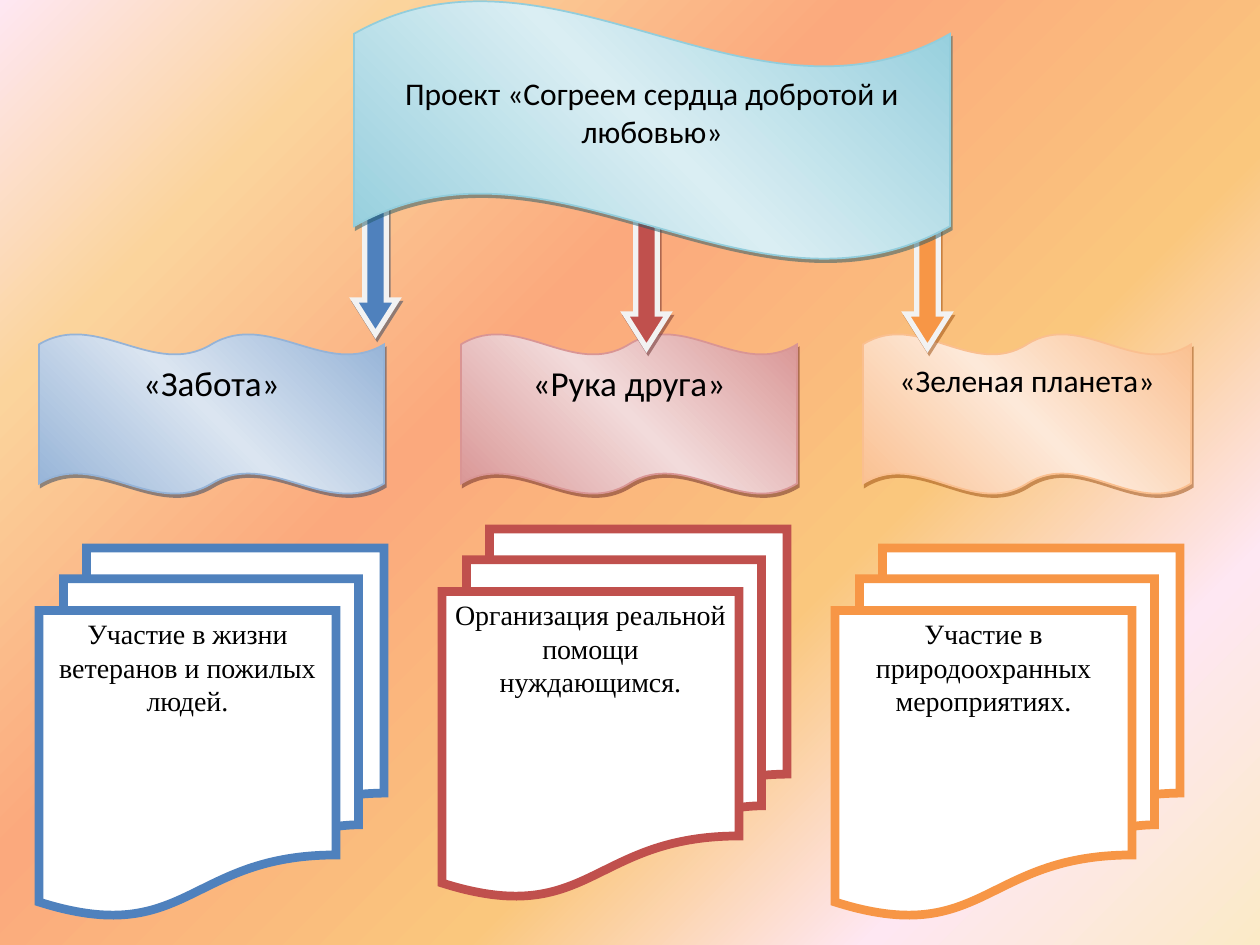
from lxml import etree
from pptx import Presentation, util as u
from pptx.dml import color
from pptx.enum import shapes, text
from pptx.oxml import ns

PX_PER_INCH = 126
COLORS = {
    "white": "FFFFFF", "black": "000000", "arrow_edge": "F2F2F2",
    "blue": "4F81BD", "blue_mid": "95B3D7", "blue_pale": "DBE5F1", "blue_dark": "243F60",
    "red": "C0504D", "red_mid": "D99594", "red_pale": "F2DBDB", "red_dark": "622423",
    "orange": "F79646", "orange_mid": "FABF8F", "orange_pale": "FDE9D9", "orange_dark": "974706",
    "aqua_mid": "92CDDC", "aqua_pale": "DAEEF3", "aqua_dark": "205867",
    "cream": "FBEAC7", "rose": "FEE7F2", "gold": "FAC77D", "coral": "FBA97D", "sand": "FBD49C",
}
BACKGROUND = [(0, "cream"), (18, "rose"), (36, "gold"), (61, "coral"), (82, "sand"), (100, "rose")]


def px(length):
    return u.Emu(round(length * u.Inches(1) / PX_PER_INCH))


def rgb(name):
    return color.RGBColor.from_string(COLORS[name])


def add_node(parent, tag, **attributes):
    values = {key: str(int(value)) if isinstance(value, int) else value
              for key, value in attributes.items()}
    return etree.SubElement(parent, ns.qn(tag), values)


class SlideBuilder:
    paragraph_format = {"alignment": text.PP_ALIGN.CENTER, "space_after": u.Pt(10)}
    frame_format = {"word_wrap": True, "vertical_anchor": text.MSO_ANCHOR.TOP}

    def __init__(self, slide):
        self.slide = slide

    def gradient(self, fill, element, stops):
        fill.gradient()
        node = element.find(".//" + ns.qn("a:gradFill"))
        for child in list(node):
            node.remove(child)
        stop_list = add_node(node, "a:gsLst")
        for position, name in stops:
            stop = add_node(stop_list, "a:gs", pos=position * 1000)
            add_node(stop, "a:srgbClr", val=COLORS[name])
        return node

    def background(self, stops):
        node = self.gradient(self.slide.background.fill, self.slide.element, stops)
        circle = add_node(node, "a:path", path="circle")
        add_node(circle, "a:fillToRect", l=100000, t=100000)

    def shape(self, kind, box, line, width, adjustments=(), shadow=None):
        shape = self.slide.shapes.add_shape(kind, *map(px, box))
        for index, value in enumerate(adjustments):
            shape.adjustments[index] = value
        shape.line.color.rgb = rgb(line)
        shape.line.width = u.Pt(width)
        properties = shape.element.spPr
        add_node(properties.find(ns.qn("a:ln")), "a:miter", lim=800000)
        shape.shadow.inherit = False
        if shadow:
            effects = properties.find(ns.qn("a:effectLst"))
            outer = add_node(effects, "a:outerShdw", dist=u.Pt(2.2), dir=63 * 60000,
                             algn="ctr", rotWithShape=0)
            tint = add_node(outer, "a:srgbClr", val=COLORS[shadow])
            add_node(tint, "a:alpha", val=50000)
        return shape

    def solid(self, shape, name):
        shape.fill.solid()
        shape.fill.fore_color.rgb = rgb(name)

    def label(self, shape, words, size, font):
        frame = shape.text_frame
        paragraph = frame.paragraphs[0]
        run = paragraph.add_run()
        run.text = words
        run.font.color.rgb = rgb("black")
        font_format = {"size": u.Pt(size), "name": font}
        for target, values in ((frame, self.frame_format), (paragraph, self.paragraph_format),
                               (run.font, font_format)):
            for key, value in values.items():
                setattr(target, key, value)

    def banner(self, kind, box, bend, hue, words, size):
        edge = f"{hue}_mid"
        shape = self.shape(kind, box, edge, 1, (bend, 0), f"{hue}_dark")
        stops = [(0, edge), (50, f"{hue}_pale"), (100, edge)]
        node = self.gradient(shape.fill, shape.element, stops)
        add_node(node, "a:lin", ang=315 * 60000, scaled=1)
        self.label(shape, words, size, "Calibri")

    def arrow(self, left, top, hue):
        shape = self.shape(shapes.MSO_SHAPE.DOWN_ARROW, (left, top, 43, 135),
                           "arrow_edge", 3, (0.5, 0.79), f"{hue}_dark")
        self.solid(shape, hue)

    def card(self, left, top, hue, words):
        shape = self.shape(shapes.MSO_SHAPE.FLOWCHART_MULTIDOCUMENT,
                           (left, top, 345, 368), hue, 5)
        self.solid(shape, "white")
        self.label(shape, words, 16, "Times New Roman")


def main():
    presentation = Presentation()
    presentation.slide_width, presentation.slide_height = px(1260), px(945)
    builder = SlideBuilder(presentation.slides.add_slide(presentation.slide_layouts[6]))
    builder.background(BACKGROUND)

    banners = [
        (39, 345, "blue", "«Забота»", 20),
        (461, 336, "red", "«Рука друга»", 20),
        (863, 328, "orange", "«Зеленая планета»", 18),
    ]
    for left, width, hue, words, size in banners:
        builder.banner(shapes.MSO_SHAPE.DOUBLE_WAVE, (left, 334, width, 160), 0.065,
                       hue, words, size)

    for left, top, hue in [(354, 199, "blue"), (625, 213, "red"), (906, 213, "orange")]:
        builder.arrow(left, top, hue)

    builder.banner(shapes.MSO_SHAPE.WAVE, (354, 0, 596, 260), 0.13, "aqua",
                   "Проект «Согреем сердца добротой и любовью»", 18)

    cards = [
        (39, 548, "blue", "Участие в жизни ветеранов и пожилых людей."),
        (442, 529, "red", "Организация реальной помощи нуждающимся."),
        (835, 548, "orange", "Участие в природоохранных мероприятиях."),
    ]
    for left, top, hue, words in cards:
        builder.card(left, top, hue, words)

    presentation.save("out.pptx")


if __name__ == "__main__":
    main()
